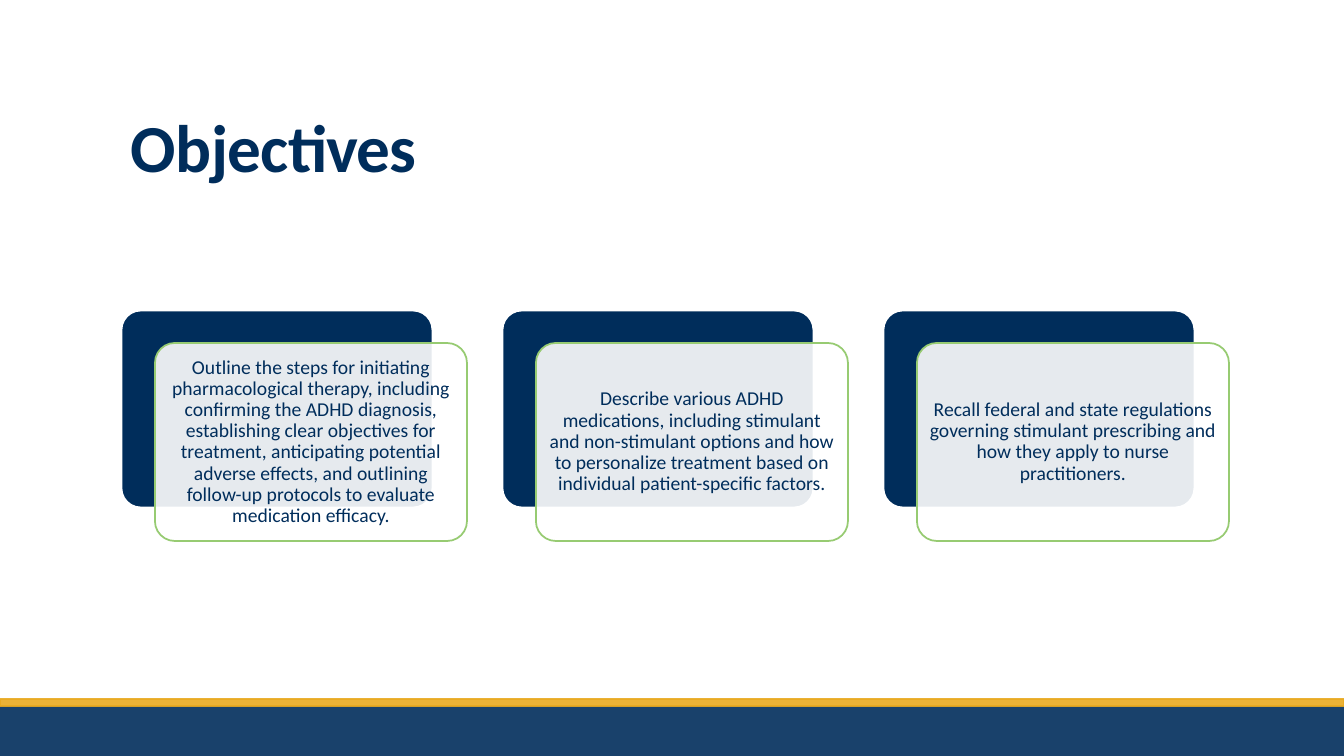
from dataclasses import dataclass

from lxml.etree import SubElement
from pptx import Presentation
from pptx.dml.color import RGBColor
from pptx.enum.shapes import MSO_SHAPE
from pptx.enum.text import MSO_ANCHOR, PP_ALIGN
from pptx.oxml.ns import qn
from pptx.util import Pt

TITLE = "Objectives"
OBJECTIVES = [
    "Outline the steps for initiating pharmacological therapy, including confirming the ADHD "
    "diagnosis, establishing clear objectives for treatment, anticipating potential adverse "
    "effects, and outlining follow-up protocols to evaluate medication efficacy.",
    "Describe various ADHD medications, including stimulant and non-stimulant options and how "
    "to personalize treatment based on individual patient-specific factors.",
    "Recall federal and state regulations governing stimulant prescribing and how they apply "
    "to nurse practitioners.",
]


@dataclass(frozen=True)
class Theme:
    navy: str = "002D5B"
    gold: str = "E9AA21"
    green: str = "97CB72"
    white: str = "FFFFFF"
    font: str = "Calibri"
    title_size: int = 48
    body_size: int = 14


THEME = Theme()

# All lengths in px
SLIDE_W, SLIDE_H = 1344, 756
TITLE_BOX = (121, 31, 1109, 160)
NAVY_TOP, GOLD_H = 706, 7
CARD_X, CARD_Y, CARD_W, CARD_H = 121, 310, 312, 198
CARD_PITCH = 381
FRONT_DX, FRONT_DY = 34, 33
CARD_INSET = 6


def px(n):
    return round(n * 914400 / 100.8)


def paint(fill, color, opacity=100):
    """Make a fill solid, with opacity in percent."""
    fill.solid()
    fill.fore_color.rgb = RGBColor.from_string(color)
    if opacity < 100:
        clr = fill._xPr.find(qn("a:solidFill"))[0]
        SubElement(clr, qn("a:alpha")).set("val", str(opacity * 1000))


def add_block(s, kind, box, fill, opacity=100, line=None, line_width=1.25, line_opacity=100):
    sp = s.shapes.add_shape(kind, *map(px, box))
    sp.shadow.inherit = False
    paint(sp.fill, fill, opacity)
    if line:
        paint(sp.line.fill, line, line_opacity)
        sp.line.width = Pt(line_width)
    else:
        sp.line.fill.background()
    if kind == MSO_SHAPE.ROUNDED_RECTANGLE:
        sp.adjustments[0] = 0.1
    return sp


def write(sp, text, size, anchor, align, spacing, bold=False, tracking=None, inset=None):
    tf = sp.text_frame
    tf.word_wrap = True
    tf.vertical_anchor = anchor
    if inset is not None:
        tf.margin_left = tf.margin_right = tf.margin_top = tf.margin_bottom = px(inset)
    p = tf.paragraphs[0]
    p.alignment = align
    p.line_spacing = spacing
    r = p.add_run()
    r.text = text
    r.font.name = THEME.font
    r.font.size = Pt(size)
    r.font.bold = bold
    r.font.color.rgb = RGBColor.from_string(THEME.navy)
    if tracking is not None:
        r.font._element.set("spc", str(round(tracking * 100)))


def add_card(s, x, text):
    kind = MSO_SHAPE.ROUNDED_RECTANGLE
    add_block(s, kind, (x, CARD_Y, CARD_W, CARD_H), THEME.navy,
              line=THEME.white, line_width=2)
    front = add_block(s, kind, (x + FRONT_DX, CARD_Y + FRONT_DY, CARD_W, CARD_H),
                      THEME.white, opacity=90, line=THEME.green)
    write(front, text, THEME.body_size, MSO_ANCHOR.MIDDLE, PP_ALIGN.CENTER, 0.9,
          inset=CARD_INSET)


def main():
    prs = Presentation()
    prs.slide_width, prs.slide_height = px(SLIDE_W), px(SLIDE_H)
    s = prs.slides.add_slide(prs.slide_layouts[6])

    add_block(s, MSO_SHAPE.RECTANGLE, (0, NAVY_TOP, SLIDE_W, SLIDE_H - NAVY_TOP),
              THEME.navy, opacity=90)
    add_block(s, MSO_SHAPE.RECTANGLE, (0, NAVY_TOP - GOLD_H, SLIDE_W, GOLD_H),
              THEME.gold, opacity=90, line=THEME.gold, line_opacity=90)

    title = s.shapes.add_textbox(*map(px, TITLE_BOX))
    write(title, TITLE, THEME.title_size, MSO_ANCHOR.BOTTOM, PP_ALIGN.LEFT, 0.85,
          bold=True, tracking=-0.5)

    for i, text in enumerate(OBJECTIVES):
        add_card(s, CARD_X + i * CARD_PITCH, text)

    prs.save("out.pptx")


if __name__ == "__main__":
    main()
